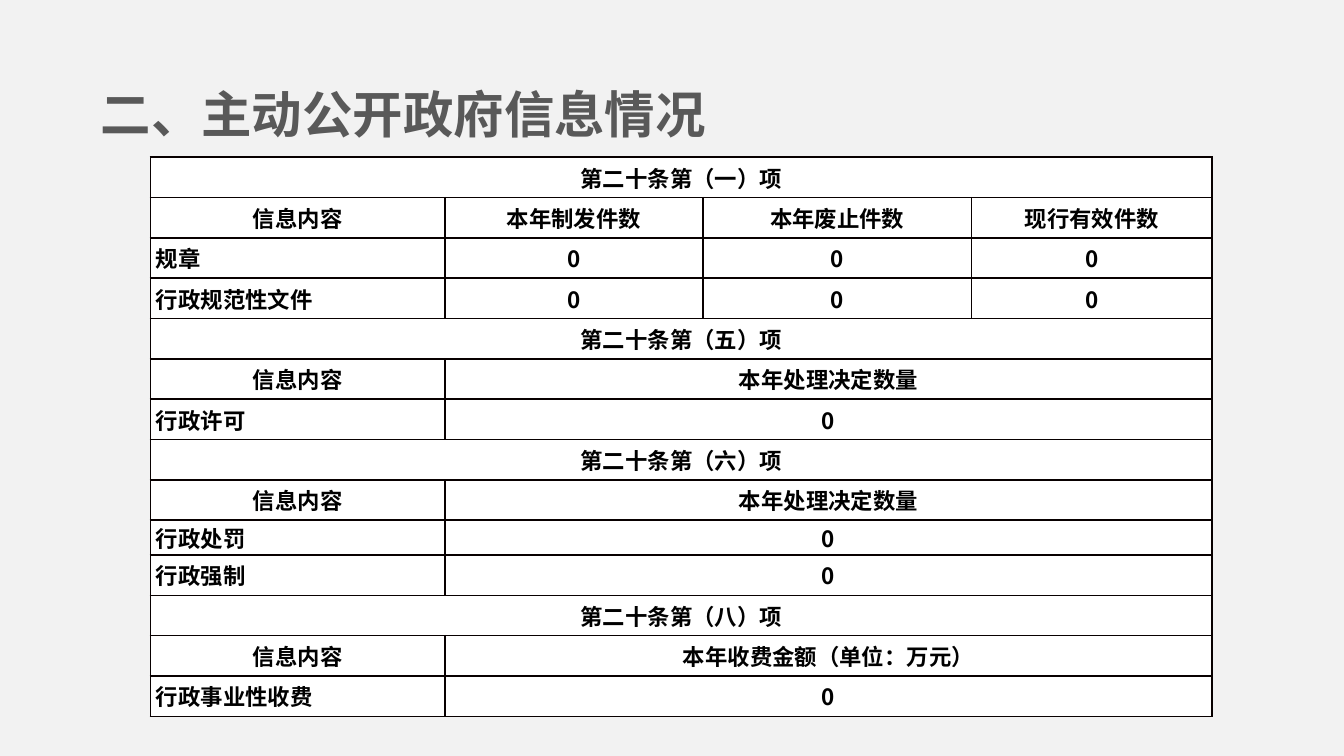
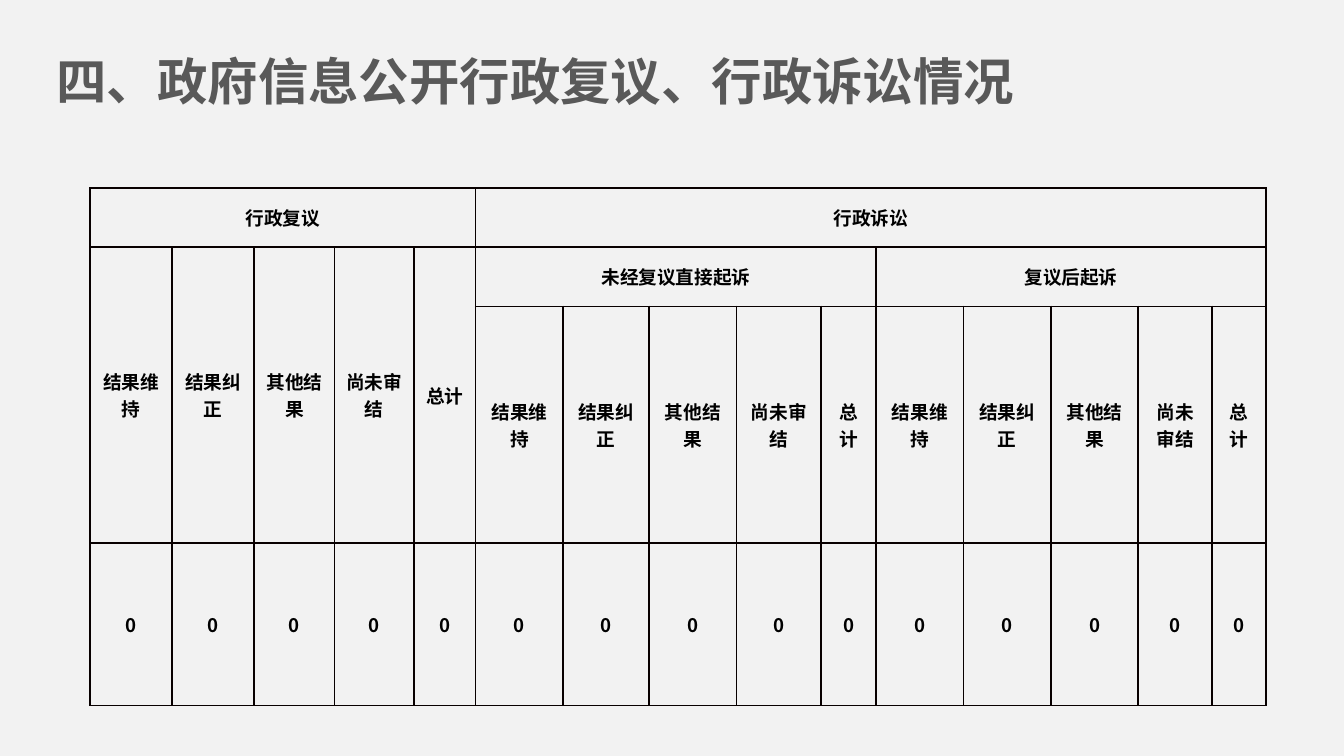
from lxml.etree import SubElement
from pptx import Presentation
from pptx.dml.color import RGBColor
from pptx.enum.text import MSO_ANCHOR, MSO_AUTO_SIZE, PP_ALIGN
from pptx.oxml import parse_xml
from pptx.oxml.ns import nsdecls, qn
from pptx.util import Inches, Pt

BACKGROUND = RGBColor(0xF2, 0xF2, 0xF2)
TITLE_COLOR = RGBColor(0x59, 0x59, 0x59)
BLACK = RGBColor(0, 0, 0)
WHITE = RGBColor(0xFF, 0xFF, 0xFF)
BORDER = RGBColor(0x08, 0, 0)
TITLE_FONT = "Arial"
CJK_FONT = "Noto Sans CJK SC"

DISCLOSURE_TITLE = "二、主动公开政府信息情况"
DISCLOSURE_COLS = [2.19, 1.92, 2, 1.79]
DISCLOSURE_HEIGHTS = [0.3] * 9 + [0.26] + [0.3] * 4
DISCLOSURE_ROWS = [
    ["第二十条第（一）项"],
    ["信息内容", "本年制发件数", "本年废止件数", "现行有效件数"],
    ["规章", "0", "0", "0"],
    ["行政规范性文件", "0", "0", "0"],
    ["第二十条第（五）项"],
    ["信息内容", "本年处理决定数量"],
    ["行政许可", "0"],
    ["第二十条第（六）项"],
    ["信息内容", "本年处理决定数量"],
    ["行政处罚", "0"],
    ["行政强制", "0"],
    ["第二十条第（八）项"],
    ["信息内容", "本年收费金额（单位：万元）"],
    ["行政事业性收费", "0"],
]

REVIEW_TITLE = "四、政府信息公开行政复议、行政诉讼情况"
REVIEW_COLS = [0.61, 0.61, 0.6, 0.59, 0.46, 0.65, 0.64, 0.65, 0.63, 0.41,
               0.65, 0.65, 0.65, 0.55, 0.4]
REVIEW_HEIGHTS = [0.44, 0.44, 1.76, 1.21]
REVIEW_GROUPS = [
    (0, 0, 1, 5, "行政复议"),
    (0, 5, 1, 10, "行政诉讼"),
    (1, 5, 1, 5, "未经复议直接起诉"),
    (1, 10, 1, 5, "复议后起诉"),
]
OUTCOMES = ["结果维持", "结果纠正", "其他结果", "尚未审结", "总计"]


def set_font(p, name, size, color):
    """Make a paragraph bold in the given font, for Latin and Chinese text."""
    p.font.name = name
    p.font.size = Pt(size)
    p.font.bold = True
    p.font.color.rgb = color
    props = p._p.pPr.find(qn("a:defRPr"))
    SubElement(props, qn("a:ea")).set("typeface", CJK_FONT)


def add_slide(prs, title, left, top, width):
    """Add a title-only slide with its title in place."""
    s = prs.slides.add_slide(prs.slide_layouts[5])
    sp = s.shapes.title
    sp.left, sp.top = Inches(left), Inches(top)
    sp.width, sp.height = Inches(width), Inches(0.68)
    tf = sp.text_frame
    tf.text = title
    tf.word_wrap = True
    tf.auto_size = MSO_AUTO_SIZE.NONE
    tf.vertical_anchor = MSO_ANCHOR.TOP
    tf.margin_left = tf.margin_right = Inches(0.08)
    tf.margin_top = tf.margin_bottom = 0
    p = tf.paragraphs[0]
    p.alignment = PP_ALIGN.LEFT
    p.line_spacing = 1.5
    set_font(p, TITLE_FONT, 27, TITLE_COLOR)
    return s


def format_cell(cell, size, margin, fill):
    """Give a cell its borders, fill, margins and centred bold text."""
    props = cell._tc.get_or_add_tcPr()
    for side in "LRTB":
        props.append(parse_xml(
            f'<a:ln{side} {nsdecls("a")} w="{Pt(1)}"><a:solidFill>'
            f'<a:srgbClr val="{BORDER}"/></a:solidFill></a:ln{side}>'))
    if fill is None:
        cell.fill.background()
    else:
        cell.fill.solid()
        cell.fill.fore_color.rgb = fill
    cell.margin_left = cell.margin_right = Inches(margin)
    cell.margin_top = cell.margin_bottom = 0
    cell.vertical_anchor = MSO_ANCHOR.MIDDLE
    p = cell.text_frame.paragraphs[0]
    p.alignment = PP_ALIGN.CENTER
    set_font(p, CJK_FONT, size, BLACK)


def add_grid(s, left, top, cols, heights, cells, size, margin, fill=None):
    """Add a table from (row, column, row span, column span, text) cells."""
    table = s.shapes.add_table(
        len(heights), len(cols), Inches(left), Inches(top),
        Inches(sum(cols)), Inches(sum(heights))).table
    table.first_row = table.horz_banding = False
    for column, width in zip(table.columns, cols):
        column.width = Inches(width)
    for row, height in zip(table.rows, heights):
        row.height = Inches(height)
    for r, c, down, across, text in cells:
        cell = table.cell(r, c)
        cell.text = text
        if down * across > 1:
            cell.merge(table.cell(r + down - 1, c + across - 1))
    for cell in table.iter_cells():
        format_cell(cell, size, margin, fill)
    return table


def disclosure_cells():
    """Stretch the last cell of each row to the right edge."""
    return [(r, c, 1, len(DISCLOSURE_COLS) - c if c == len(row) - 1 else 1, text)
            for r, row in enumerate(DISCLOSURE_ROWS)
            for c, text in enumerate(row)]


def review_cells():
    """Repeat the outcomes and a zero under each of the three groups."""
    cells = list(REVIEW_GROUPS)
    n = len(OUTCOMES)
    for c in range(len(REVIEW_COLS)):
        r, down = (1, 2) if c < n else (2, 1)
        cells += [(r, c, down, 1, OUTCOMES[c % n]), (3, c, 1, 1, "0")]
    return cells


def main():
    """Build both slides and save the presentation."""
    prs = Presentation()
    prs.slide_width = Inches(10)
    prs.slide_height = prs.slide_width * 9 // 16
    fill = prs.slide_master.background.fill
    fill.solid()
    fill.fore_color.rgb = BACKGROUND

    s = add_slide(prs, DISCLOSURE_TITLE, 0.67, 0.39, 5.32)
    table = add_grid(s, 1.12, 1.17, DISCLOSURE_COLS, DISCLOSURE_HEIGHTS,
                     disclosure_cells(), 12, 0.04, WHITE)
    for r, row in enumerate(DISCLOSURE_ROWS):
        if row[-1] == "0":
            table.cell(r, 0).text_frame.paragraphs[0].alignment = PP_ALIGN.LEFT

    s = add_slide(prs, REVIEW_TITLE, 0.34, 0.15, 7.7)
    add_grid(s, 0.67, 1.4, REVIEW_COLS, REVIEW_HEIGHTS, review_cells(), 10, 0.07)
    prs.save("out.pptx")


if __name__ == "__main__":
    main()
